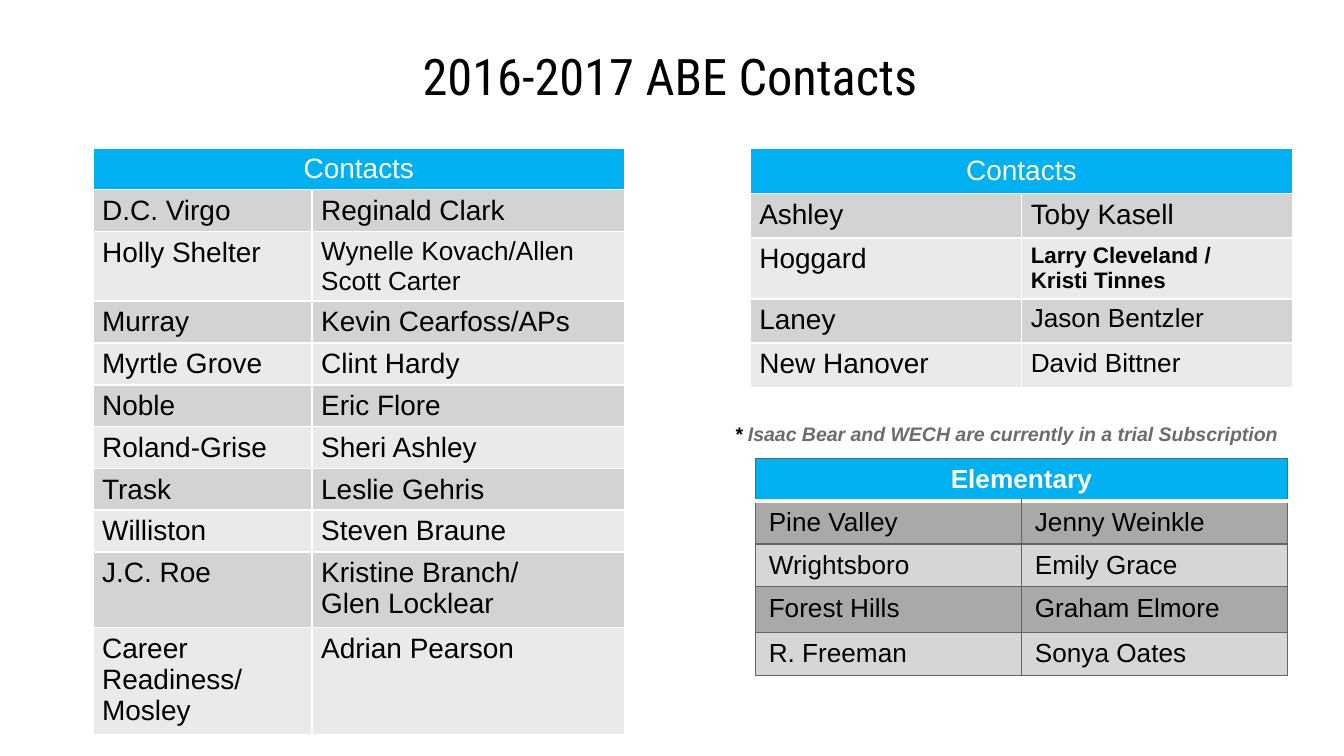
from dataclasses import dataclass

from lxml.etree import SubElement
from pptx import Presentation
from pptx.dml.color import RGBColor
from pptx.enum.text import MSO_ANCHOR as Anchor, MSO_AUTO_SIZE as AutoSize, PP_ALIGN as Align
from pptx.oxml.ns import qn
from pptx.util import Inches, Pt

COLORS = {
    "header": "00B0F0", "white": "FFFFFF", "black": "000000", "note": "6C6C6C",
    "band_dark": "D3D3D3", "band_light": "EAEAEA", "grid": "646464",
    "elementary_dark": "A9A9A9", "elementary_light": "D6D6D6",
}


@dataclass
class Entry:
    school: str
    contact: str
    height: float = 0.31
    size: float = 15
    bold: bool = False


@dataclass
class ContactTable:
    heading: str
    left: float
    top: float
    columns: tuple[float, float]
    header_height: float
    entries: list[Entry]
    size: float = 15
    heading_bold: bool = False
    bands: tuple[str, str] = ("band_dark", "band_light")
    line: str = "white"
    line_width: float = 1
    header_rule: float = 1
    margins: tuple[float, float] = (0.07, 0.04)


MIDDLE = ContactTable("Contacts", 0.69, 1.1, (1.63, 2.33), 0.31, [
    Entry("D.C. Virgo", "Reginald Clark"),
    Entry("Holly Shelter", "Wynelle Kovach/Allen Scott Carter", size=14),
    Entry("Murray", "Kevin Cearfoss/APs"),
    Entry("Myrtle Grove", "Clint Hardy"),
    Entry("Noble", "Eric Flore"),
    Entry("Roland-Grise", "Sheri Ashley"),
    Entry("Trask", "Leslie Gehris"),
    Entry("Williston", "Steven Braune"),
    Entry("J.C. Roe", "Kristine Branch/\nGlen Locklear", 0.56),
    Entry("Career Readiness/\nMosley", "Adrian Pearson", 0.8),
])
HIGH = ContactTable("Contacts", 5.58, 1.1, (2.02, 2.02), 0.34, [
    Entry("Ashley", "Toby Kasell", 0.33),
    Entry("Hoggard", "Larry Cleveland /\nKristi Tinnes", 0.33, 12, True),
    Entry("Laney", "Jason Bentzler", 0.33, 14),
    Entry("New Hanover", "David Bittner", 0.33, 14),
])
ELEMENTARY = ContactTable("Elementary", 5.62, 3.41, (1.98, 1.98), 0.27, [
    Entry("Pine Valley", "Jenny Weinkle", 0.27, 14),
    Entry("Wrightsboro", "Emily Grace", 0.27, 14),
    Entry("Forest Hills", "Graham Elmore", 0.34, 14),
    Entry("R. Freeman", "Sonya Oates", 0.27, 14),
], size=14, heading_bold=True, bands=("elementary_dark", "elementary_light"),
    line="grid", line_width=0.75, header_rule=2, margins=(0.1, 0.05))


def rgb(name: str) -> RGBColor:
    return RGBColor.from_string(COLORS[name])


def add_span(para, text: str, *, size: float, color: str = "black", font: str = "Arial",
             bold: bool = False, italic: bool = False) -> None:
    span = para.add_run()
    span.text = text
    style = span.font
    style.name, style.size, style.bold, style.italic = font, Pt(size), bold, italic
    style.color.rgb = rgb(color)


def write(frame, text: str, *, align=Align.LEFT, **style) -> None:
    """Write each line of the text as its own paragraph."""
    for index, line in enumerate(text.split("\n")):
        para = frame.paragraphs[0] if index == 0 else frame.add_paragraph()
        para.alignment = align
        add_span(para, line, **style)


def set_borders(cell, borders: dict[str, tuple[str, float]]) -> None:
    """Add the cell's lines ahead of its fill, as the schema asks."""
    properties = cell._tc.get_or_add_tcPr()
    for index, (side, (color, width)) in enumerate(borders.items()):
        line = SubElement(properties, qn(f"a:ln{side}"), w=str(Pt(width)))
        fill = SubElement(line, qn("a:solidFill"))
        SubElement(fill, qn("a:srgbClr"), val=COLORS[color])
        properties.insert(index, line)


def draw_table(page, contacts: ContactTable) -> None:
    heights = [contacts.header_height] + [entry.height for entry in contacts.entries]
    table = page.shapes.add_table(
        len(heights), 2, Inches(contacts.left), Inches(contacts.top),
        Inches(sum(contacts.columns)), Inches(sum(heights))).table
    table.first_row = table.horz_banding = False
    for column, width in zip(table.columns, contacts.columns):
        column.width = Inches(width)
    for row, height in zip(table.rows, heights):
        row.height = Inches(height)

    plain, rule = (contacts.line, contacts.line_width), ("white", contacts.header_rule)
    for index, row in enumerate(table.rows):
        for cell in row.cells:
            cell.margin_left = cell.margin_right = Inches(contacts.margins[0])
            cell.margin_top = cell.margin_bottom = Inches(contacts.margins[1])
            cell.fill.solid()
            cell.fill.fore_color.rgb = rgb(contacts.bands[(index - 1) % 2] if index else "header")
            set_borders(cell, {"L": plain, "R": plain,
                               "T": rule if index == 1 else plain,
                               "B": rule if index == 0 else plain})

    header = table.cell(0, 0)
    header.merge(table.cell(0, 1))
    header.vertical_anchor = Anchor.MIDDLE
    write(header.text_frame, contacts.heading, align=Align.CENTER, size=contacts.size,
          color="white", bold=contacts.heading_bold)
    for index, entry in enumerate(contacts.entries, 1):
        write(table.cell(index, 0).text_frame, entry.school, size=contacts.size)
        write(table.cell(index, 1).text_frame, entry.contact, size=entry.size, bold=entry.bold)


def draw_title(page, text: str) -> None:
    title = page.shapes.title
    title.left, title.top = Inches(1.05), Inches(0.23)
    title.width, title.height = Inches(7.87), Inches(0.74)
    frame = title.text_frame
    frame.auto_size, frame.vertical_anchor = AutoSize.NONE, Anchor.MIDDLE
    frame.margin_left = frame.margin_right = frame.margin_top = Inches(0.1)
    frame.margin_bottom = Inches(0.18)
    write(frame, text, align=Align.CENTER, size=27, font="Roboto Condensed")


def draw_note(page) -> None:
    box = page.shapes.add_textbox(Inches(5.37), Inches(3.09), Inches(4.27), Inches(0.28))
    box.text_frame.word_wrap = False
    box.text_frame.auto_size = AutoSize.SHAPE_TO_FIT_TEXT
    para = box.text_frame.paragraphs[0]
    add_span(para, "* ", size=10.5, bold=True, italic=True)
    add_span(para, "Isaac Bear and WECH are currently in a trial Subscription",
             size=10.5, color="note", bold=True, italic=True)


def main() -> None:
    deck = Presentation()
    deck.slide_width = Inches(10)
    deck.slide_height = deck.slide_width * 9 // 16
    page = deck.slides.add_slide(deck.slide_layouts[5])
    draw_title(page, "2016-2017 ABE Contacts")
    for contacts in (MIDDLE, HIGH, ELEMENTARY):
        draw_table(page, contacts)
    draw_note(page)
    deck.save("out.pptx")


if __name__ == "__main__":
    main()
